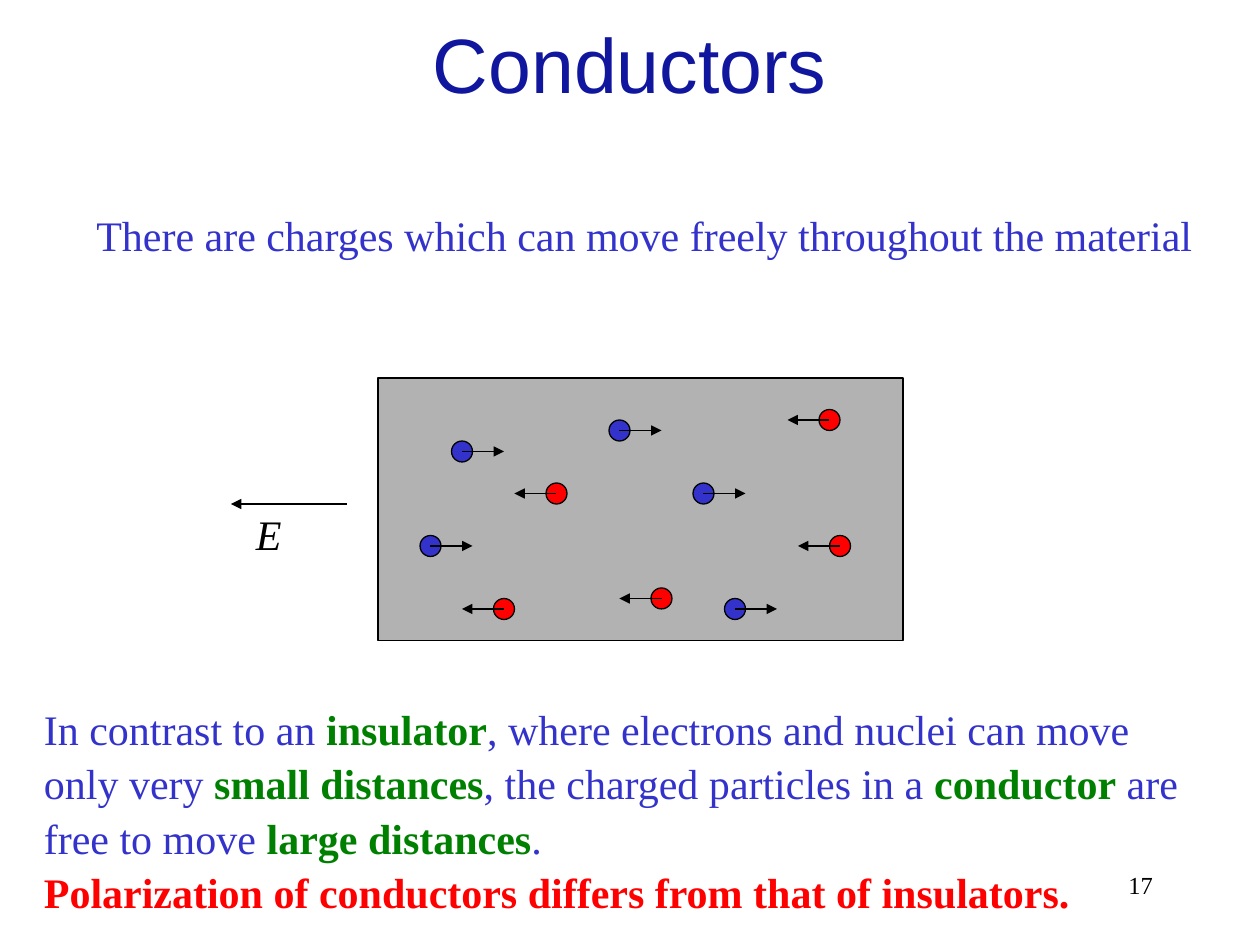
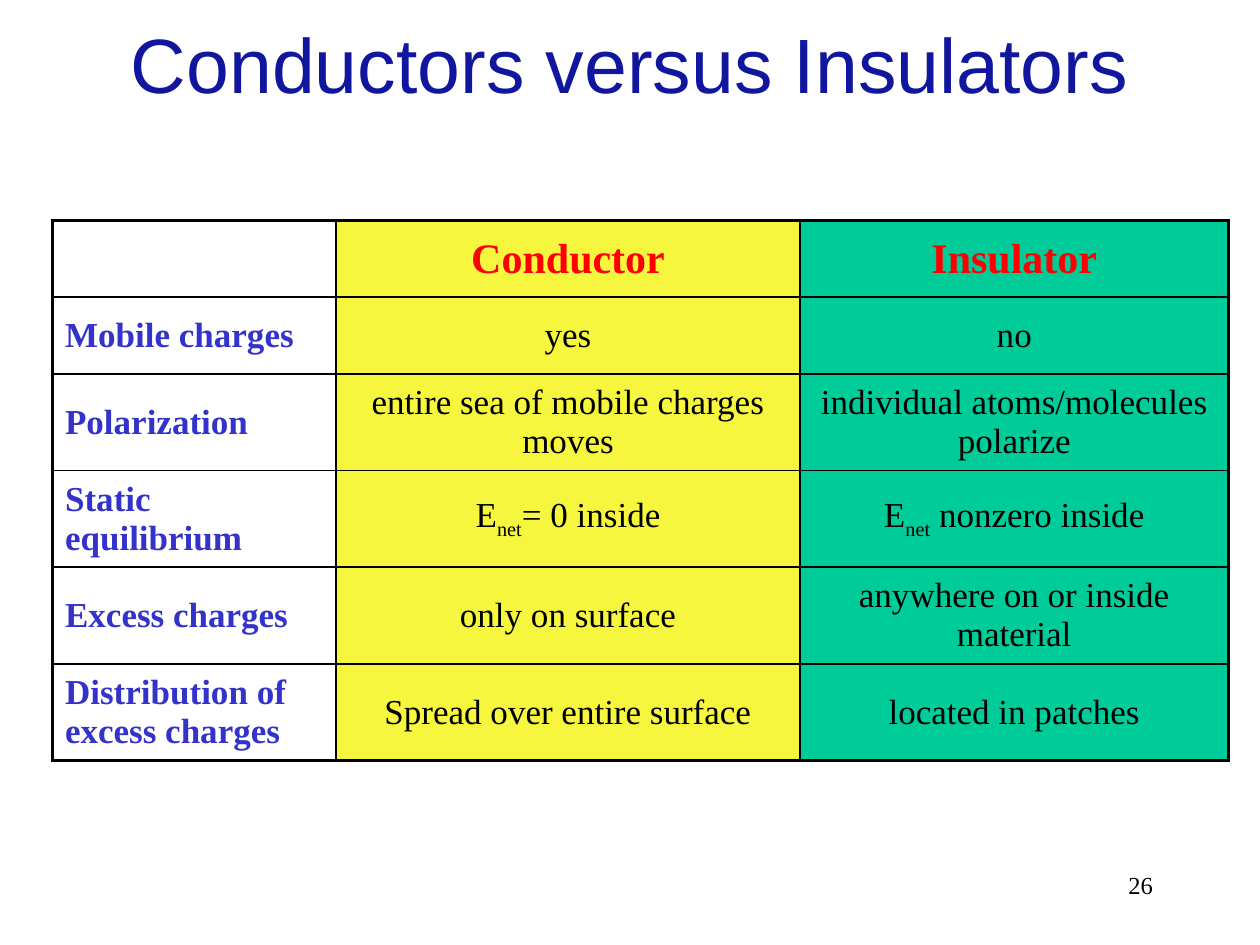
import pptx
import pptx.util
import pptx.dml.color
import pptx.enum.shapes
import pptx.enum.text
import pptx.oxml
import pptx.oxml.ns
import lxml.etree

RGB = pptx.dml.color.RGBColor
BLACK = RGB(0x00, 0x00, 0x00)
NAVY = RGB(0x10, 0x16, 0x9D)
BLUE = RGB(0x33, 0x33, 0xCC)
RED = RGB(0xFF, 0x00, 0x00)
GREEN = RGB(0x00, 0x80, 0x00)
GRAY = RGB(0xB2, 0xB2, 0xB2)
YELLOW = RGB(0xF6, 0xF6, 0x3F)
TEAL = RGB(0x00, 0xCC, 0x99)

SERIF, SANS = "Times New Roman", "Arial"
ALIGN = pptx.enum.text.PP_ALIGN
MIDDLE = pptx.enum.text.MSO_ANCHOR.MIDDLE
SHAPE = pptx.enum.shapes.MSO_SHAPE
TITLE_ONLY = 5
CELLS_PER_INCH = 12

BLOCK = (36, 36, 50, 25)
BLUE_CHARGES = [(31, 11), (23, 5), (34, 22), (5, 16), (8, 7)]
RED_CHARGES = [(43, 4), (12, 22), (17, 11), (44, 16), (27, 21)]
ARROW_REACH = 4

CONTRAST = [
    ("In contrast to an ", BLUE), ("insulator", GREEN),
    (", where electrons and nuclei can move only very ", BLUE),
    ("small distances", GREEN),
    (", the charged particles in a ", BLUE), ("conductor", GREEN),
    (" are free to move ", BLUE), ("large distances", GREEN), (".", BLUE),
]
CONCLUSION = [("Polarization of conductors differs from that of insulators.", RED)]

COMPARISON = [
    ["", "Conductor", "Insulator"],
    ["Mobile charges", "yes", "no"],
    ["Polarization", "entire sea of mobile charges moves",
     "individual atoms/molecules polarize"],
    ["Static equilibrium", "E_net_= 0 inside", "E_net_ nonzero inside"],
    ["Excess charges", "only on surface", "anywhere on or inside material"],
    ["Distribution of excess charges", "Spread over entire surface",
     "located in patches"],
]
COLUMN_WIDTHS = [27, 44.2, 40.8]
ROW_HEIGHTS = [7.3, 7.3, 9.2, 9.2, 9.2, 9.2]
COLUMN_FILLS = [None, YELLOW, TEAL]


def grid(*cells):
    """Convert grid cells to a list of lengths."""
    return [pptx.util.Inches(n / CELLS_PER_INCH) for n in cells]


def set_font(font, size, color, name=SERIF, bold=False, italic=False):
    """Format the font of a paragraph or run."""
    font.size, font.name = pptx.util.Pt(size), name
    font.bold, font.italic = bold, italic
    font.color.rgb = color


def add_slide(prs, title, number):
    """Add a slide with its title and page number."""
    s = prs.slides.add_slide(prs.slide_layouts[TITLE_ONLY])
    sp = s.shapes.title
    sp.left, sp.top, sp.width, sp.height = grid(0, 0, 120, 12)
    sp.text_frame.text = title
    sp.text_frame.vertical_anchor = MIDDLE
    p = sp.text_frame.paragraphs[0]
    p.alignment = ALIGN.CENTER
    set_font(p.font, 44, NAVY, SANS)
    add_label(s, (86, 82, 25, 6), number, 14, BLACK, align=ALIGN.RIGHT)
    return s


def add_text_box(s, box):
    """Add an empty text box and return its text frame."""
    return s.shapes.add_textbox(*grid(*box)).text_frame


def add_label(s, box, text, size, color, italic=False, align=ALIGN.LEFT):
    """Add one line of text."""
    tf = add_text_box(s, box)
    tf.word_wrap = False
    tf.text = text
    p = tf.paragraphs[0]
    p.alignment = align
    p.line_spacing = 1.08
    set_font(p.font, size, color, italic=italic)


def add_rich_text(s, box, paragraphs):
    """Add wrapped paragraphs of coloured runs, bold unless blue."""
    tf = add_text_box(s, box)
    tf.word_wrap = True
    for i, runs in enumerate(paragraphs):
        p = tf.add_paragraph() if i else tf.paragraphs[0]
        p.line_spacing = 1.08
        for text, color in runs:
            r = p.add_run()
            r.text = text
            set_font(r.font, 24, color, bold=color != BLUE)


def add_outlined(s, kind, box, fill):
    """Add a filled shape with a thin black outline."""
    sp = s.shapes.add_shape(kind, *grid(*box))
    sp.shadow.inherit = False
    sp.fill.solid()
    sp.fill.fore_color.rgb = fill
    sp.line.color.rgb = BLACK
    sp.line.width = pptx.util.Pt(0.75)


def add_arrow(s, x, y, reach):
    """Add a horizontal arrow, leftward when reach is negative."""
    sp = s.shapes.add_connector(
        pptx.enum.shapes.MSO_CONNECTOR.STRAIGHT, *grid(x, y, x + reach, y))
    sp.line.color.rgb = BLACK
    sp.line.width = pptx.util.Pt(0.75)
    qn = pptx.oxml.ns.qn
    spPr = sp.element.spPr
    lxml.etree.SubElement(spPr.find(qn("a:ln")), qn("a:tailEnd"), type="triangle")
    lxml.etree.SubElement(spPr, qn("a:effectLst"))


def add_charges(s, places, color, reach):
    """Add charges in the block, each with its arrow of motion."""
    for dx, dy in places:
        x, y = BLOCK[0] + dx, BLOCK[1] + dy
        add_outlined(s, SHAPE.OVAL, (x - 1, y - 1, 2, 2), color)
        add_arrow(s, x, y, reach)


def set_borders(cell, outer_sides):
    """Draw black cell borders, thick on the outer sides."""
    tcPr = cell._tc.get_or_add_tcPr()
    for side in "LRTB":
        width = pptx.util.Pt(2.25 if side in outer_sides else 1)
        tcPr.append(pptx.oxml.parse_xml(
            f'<a:ln{side} {pptx.oxml.ns.nsdecls("a")} w="{width}"><a:solidFill>'
            f'<a:srgbClr val="{BLACK}"/></a:solidFill></a:ln{side}>'))


def fill_cell(cell, text, row, col):
    """Write and format a cell, with subscripts between underscores."""
    cell.vertical_anchor = MIDDLE
    if COLUMN_FILLS[col]:
        cell.fill.solid()
        cell.fill.fore_color.rgb = COLUMN_FILLS[col]
    else:
        cell.fill.background()
    p = cell.text_frame.paragraphs[0]
    p.alignment = ALIGN.CENTER if col else ALIGN.LEFT
    color = RED if row == 0 else BLACK if col else BLUE
    set_font(p.font, 20 if row else 24, color, bold=row == 0 or col == 0)
    for i, part in enumerate(text.split("_") if text else []):
        r = p.add_run()
        r.text = part
        if i % 2:
            r.font._element.set("baseline", "-25000")


def add_comparison(s):
    """Add the table of conductor and insulator properties."""
    n_rows, n_cols = len(ROW_HEIGHTS), len(COLUMN_WIDTHS)
    table = s.shapes.add_table(
        n_rows, n_cols,
        *grid(5, 21, sum(COLUMN_WIDTHS), sum(ROW_HEIGHTS))).table
    table.first_row = table.horz_banding = False
    for column, width in zip(table.columns, grid(*COLUMN_WIDTHS)):
        column.width = width
    for row, height in zip(table.rows, grid(*ROW_HEIGHTS)):
        row.height = height
    for i, texts in enumerate(COMPARISON):
        for j, text in enumerate(texts):
            edges = {"T": i == 0, "B": i == n_rows - 1,
                     "L": j == 0, "R": j == n_cols - 1}
            cell = table.cell(i, j)
            set_borders(cell, [side for side in edges if edges[side]])
            fill_cell(cell, text, i, j)


def build_conductors(prs):
    """Build the slide on charges moving in a conductor."""
    s = add_slide(prs, "Conductors", "17")
    add_label(s, (8, 19, 107, 6),
              "There are charges which can move freely throughout the material",
              24, BLUE)
    add_outlined(s, SHAPE.RECTANGLE, BLOCK, GRAY)
    add_charges(s, BLUE_CHARGES, BLUE, ARROW_REACH)
    add_charges(s, RED_CHARGES, RED, -ARROW_REACH)
    add_arrow(s, 33, 48, -11)
    add_label(s, (23.2, 47.5, 4.8, 6), "E", 24, BLACK, italic=True)
    add_rich_text(s, (3, 66, 112, 20.4), [CONTRAST, CONCLUSION])


def main():
    """Build and save the presentation."""
    prs = pptx.Presentation()
    prs.slide_width, prs.slide_height = grid(120, 90)
    build_conductors(prs)
    add_comparison(add_slide(prs, "Conductors versus Insulators", "26"))
    prs.save("out.pptx")


if __name__ == "__main__":
    main()
